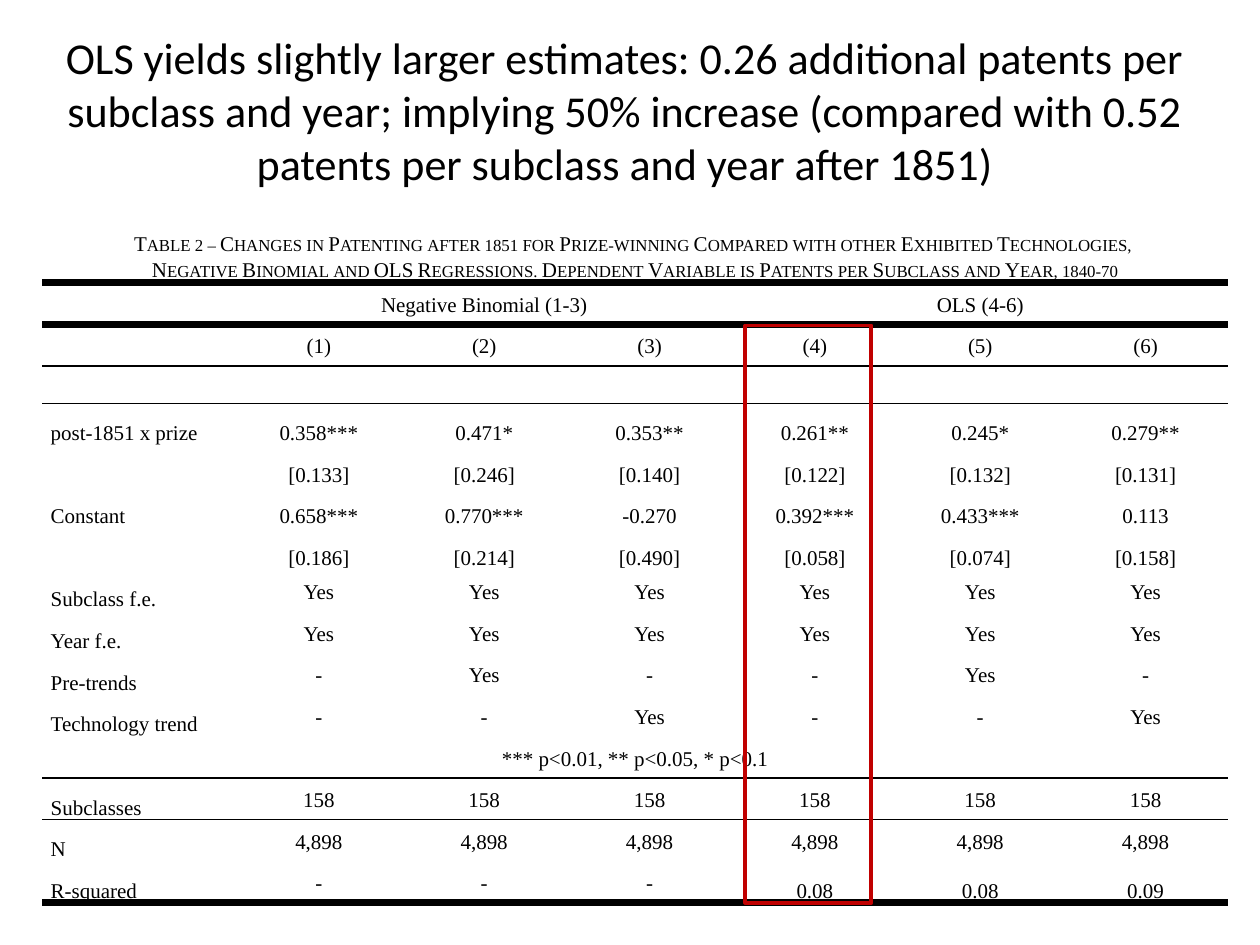
"""Build a slide with a regression table and one highlighted column."""
from lxml import etree
from pptx import Presentation
from pptx.dml.color import RGBColor
from pptx.enum.shapes import MSO_SHAPE
from pptx.enum.text import MSO_ANCHOR, PP_ALIGN
from pptx.oxml.ns import qn
from pptx.util import Pt

MIDDLE, BOTTOM = MSO_ANCHOR.MIDDLE, MSO_ANCHOR.BOTTOM
LEFT, CENTER = PP_ALIGN.LEFT, PP_ALIGN.CENTER
RECT = MSO_SHAPE.RECTANGLE

BLACK, RED = "000000", "C00000"
SERIF = "Times New Roman"
NO_GRID = "{2D5ABB26-0587-4C30-8999-92F81FD0307C}"

TITLE = ("OLS yields slightly larger estimates: 0.26 additional patents per subclass and year; "
         "implying 50% increase (compared with 0.52 patents per subclass and year after 1851)")
CAPTION = (
    "Table 2 – Changes in Patenting after 1851 for Prize-winning Compared with other "
    "Exhibited Technologies, \n"
    "Negative Binomial and OLS Regressions. Dependent Variable is Patents per Subclass and Year, "
    "1840-70")
ROWS = [
    [CAPTION] + [""] * 6,
    ["", "Negative Binomial (1-3)", "", "", "OLS (4-6)", "", ""],
    ["", "(1)", "(2)", "(3)", "(4)", "(5)", "(6)"],
    [""] * 7,
    ["post-1851 x prize", "0.358***", "0.471*", "0.353**", "0.261**", "0.245*", "0.279**"],
    ["", "[0.133]", "[0.246]", "[0.140]", "[0.122]", "[0.132]", "[0.131]"],
    ["Constant", "0.658***", "0.770***", "-0.270", "0.392***", "0.433***", "0.113"],
    ["", "[0.186]", "[0.214]", "[0.490]", "[0.058]", "[0.074]", "[0.158]"],
    ["Subclass f.e."] + ["Yes"] * 6,
    ["Year f.e."] + ["Yes"] * 6,
    ["Pre-trends", "-", "Yes", "-", "-", "Yes", "-"],
    ["Technology trend", "-", "-", "Yes", "-", "-", "Yes"],
    ["*** p<0.01, ** p<0.05, * p<0.1"] + [""] * 6,
    ["Subclasses"] + ["158"] * 6,
    ["N"] + ["4,898"] * 6,
    ["R-squared", "-", "-", "-", "0.08", "0.08", "0.09"],
]
SPANS = {(0, 0): 7, (1, 1): 3, (1, 4): 3, (12, 0): 7}
RULES = {0: 4.5, 2: 1, 12: 1, 15: 4.5}
CAPTION_ROW, SPACER_ROW, NOTE_ROW = 0, 3, 12
ESTIMATE_ROWS = range(4, 8)

LABEL_W, COL_W = 111, 94.5
ROW_H = 23.8
HEIGHTS = {CAPTION_ROW: 2 * ROW_H, SPACER_ROW: 21.5}
TABLE_X, TABLE_Y = 24, 113.9


def rgb(value):
    return RGBColor.from_string(value)


def add_run(p, text, font, size):
    r = p.add_run()
    r.text = text
    r.font.name, r.font.size = font, Pt(size)
    r.font.color.rgb = rgb(BLACK)
    return r


def add_border(cell, side, width):
    ln = etree.Element(qn(f"a:ln{side}"), w=str(Pt(width)))
    fill = etree.SubElement(ln, qn("a:solidFill"))
    etree.SubElement(fill, qn("a:srgbClr"), val=BLACK)
    cell._tc.get_or_add_tcPr().insert(0, ln)


def anchor_for(row, col, text):
    if row in (CAPTION_ROW, *ESTIMATE_ROWS) or text.startswith("0."):
        return BOTTOM
    return BOTTOM if col == 0 and row != NOTE_ROW else MIDDLE


def fill_cell(cell, row, col, text):
    cell.fill.background()
    cell.margin_left = cell.margin_right = Pt(5)
    cell.margin_top = cell.margin_bottom = 0
    cell.vertical_anchor = anchor_for(row, col, text)
    tf = cell.text_frame
    for i, line in enumerate(text.split("\n")):
        p = tf.add_paragraph() if i else tf.paragraphs[0]
        p.alignment = LEFT if col == 0 and (row, col) not in SPANS else CENTER
        p.line_spacing = 1.15
        if line:
            r = add_run(p, line, SERIF, 12)
            if row == CAPTION_ROW:
                r.font._element.set("cap", "small")
        else:
            etree.SubElement(p._p, qn("a:endParaRPr"), sz="1200")
    if row in RULES:
        add_border(cell, "B", RULES[row])
    if row - 1 in RULES:
        add_border(cell, "T", RULES[row - 1])


def add_title(slide):
    tf = slide.shapes.add_textbox(Pt(12), Pt(12), Pt(690), Pt(102)).text_frame
    tf.word_wrap = True
    tf.vertical_anchor = MIDDLE
    p = tf.paragraphs[0]
    p.alignment = CENTER
    add_run(p, TITLE, "Calibri", 25.2)


def add_results(slide):
    heights = [HEIGHTS.get(i, ROW_H) for i in range(len(ROWS))]
    widths = [LABEL_W] + [COL_W] * 6
    frame = slide.shapes.add_table(len(ROWS), len(widths), Pt(TABLE_X), Pt(TABLE_Y),
                                   Pt(sum(widths)), Pt(sum(heights)))
    table = frame.table
    table.first_row = table.horz_banding = False
    table._tbl.tblPr.find(qn("a:tableStyleId")).text = NO_GRID
    for column, width in zip(table.columns, widths):
        column.width = Pt(width)
    for i, (values, height) in enumerate(zip(ROWS, heights)):
        table.rows[i].height = Pt(height)
        for j, text in enumerate(values):
            fill_cell(table.cell(i, j), i, j, text)
    for (i, j), span in SPANS.items():
        table.cell(i, j).merge(table.cell(i, j + span - 1))


def add_highlight(slide):
    sp = slide.shapes.add_shape(RECT, Pt(426), Pt(186), Pt(72), Pt(330))
    sp.shadow.inherit = False
    sp.fill.background()
    sp.line.color.rgb = rgb(RED)
    sp.line.width = Pt(2.25)


def main():
    prs = Presentation()
    prs.slide_width, prs.slide_height = Pt(720), Pt(540)
    slide = prs.slides.add_slide(prs.slide_layouts[6])
    add_title(slide)
    add_results(slide)
    add_highlight(slide)
    prs.save("out.pptx")


if __name__ == "__main__":
    main()
